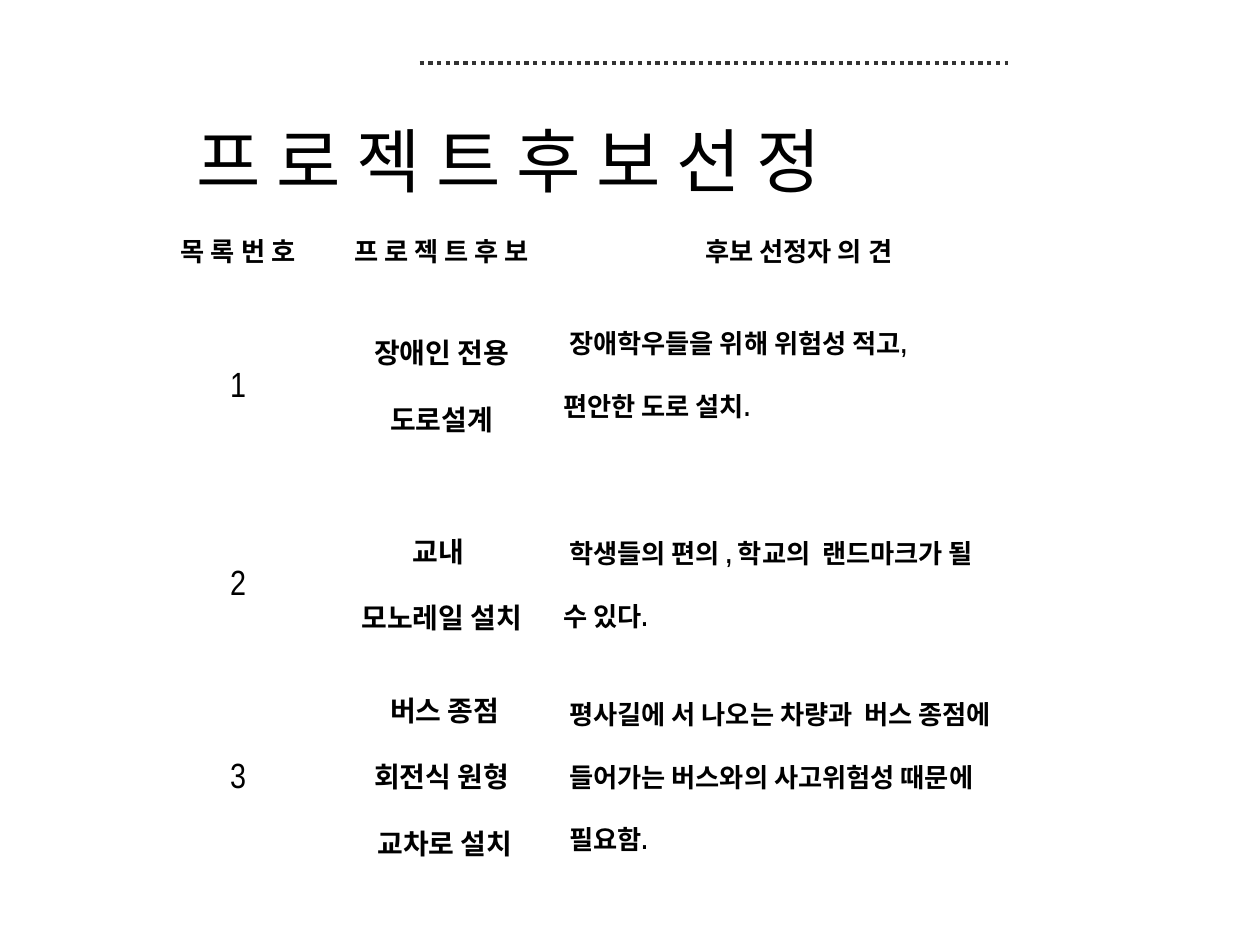
from dataclasses import dataclass

import pptx
import pptx.dml.color
import pptx.enum.dml
import pptx.enum.shapes
import pptx.enum.text
import pptx.oxml
import pptx.oxml.ns
import pptx.util

Inches = pptx.util.Inches
Pt = pptx.util.Pt
ALIGN = pptx.enum.text.PP_ALIGN
MIDDLE = pptx.enum.text.MSO_ANCHOR.MIDDLE

COLORS = {"text": "000000", "rule": "333333", "background": "FFFFFF"}
KOREAN_FONT = "Noto Sans CJK KR"
TABLE_FONT = "Arial Narrow"
COLUMN_WIDTHS = (1.5, 1.73, 3.94)
ROW_HEIGHTS = (0.38, 1.8, 1.35, 1.7)
HEADERS = ("목 록 번 호", "프 로 젝 트 후 보", "후보 선정자 의 견")


@dataclass
class Candidate:
    number: str
    project: tuple[str, ...]
    opinion: tuple[str, ...]
    opinion_align: ALIGN = ALIGN.JUSTIFY
    opinion_bottom: float = 0.05


CANDIDATES = (
    Candidate("1", ("장애인 전용", "도로설계"),
              (" 장애학우들을 위해 위험성 적고,", "편안한 도로 설치."),
              ALIGN.LEFT, 0.23),
    Candidate("2", ("교내 ", "모노레일 설치"),
              (" 학생들의 편의 , 학교의  랜드마크가 될 ", "수 있다.")),
    Candidate("3", (" 버스 종점", "회전식 원형", " 교차로 설치"),
              (" 평사길에 서 나오는 차량과  버스 종점에",
               " 들어가는 버스와의 사고위험성 때문에", " 필요함.")),
)


def color(name: str) -> pptx.dml.color.RGBColor:
    return pptx.dml.color.RGBColor.from_string(COLORS[name])


def write_line(paragraph, text: str, align, **font_format) -> None:
    """Write one line in black, with the Korean font for Korean letters."""
    paragraph.alignment = align
    run = paragraph.add_run()
    run.text = text
    for attribute, value in font_format.items():
        setattr(run.font, attribute, value)
    run.font.color.rgb = color("text")
    properties = run._r.get_or_add_rPr()
    east_asian = pptx.oxml.parse_xml(
        f'<a:ea {pptx.oxml.ns.nsdecls("a")} typeface="{KOREAN_FONT}"/>')
    properties.find(pptx.oxml.ns.qn("a:latin")).addnext(east_asian)


def clear_borders(cell) -> None:
    properties = cell._tc.get_or_add_tcPr()
    for position, side in enumerate(("lnL", "lnR", "lnT", "lnB")):
        properties.insert(position, pptx.oxml.parse_xml(
            f'<a:{side} {pptx.oxml.ns.nsdecls("a")} w="0"><a:noFill/></a:{side}>'))


def fill_cell(cell, lines: tuple[str, ...], size: int, align=ALIGN.CENTER,
              bold: bool = True, bottom: float = 0.05) -> None:
    cell.fill.background()
    clear_borders(cell)
    cell.vertical_anchor = MIDDLE
    cell.margin_bottom = Inches(bottom)
    for index, text in enumerate(lines):
        frame = cell.text_frame
        paragraph = frame.add_paragraph() if index else frame.paragraphs[0]
        if len(lines) > 1:
            paragraph.line_spacing = Pt(size * 1.2)
        if index:
            paragraph.space_before = Pt(size * 1.18)
        write_line(paragraph, text, align, name=TABLE_FONT, size=Pt(size), bold=bold)


def add_title(slide) -> None:
    title = slide.shapes.title
    placement = {"left": 1.46, "top": 0.91, "width": 6.54, "height": 0.71}
    for attribute, value in placement.items():
        setattr(title, attribute, Inches(value))
    title.text_frame.vertical_anchor = MIDDLE
    write_line(title.text_frame.paragraphs[0], "프 로 젝 트 후 보 선 정",
               ALIGN.LEFT, name=KOREAN_FONT, size=Pt(40))


def add_dotted_rule(slide) -> None:
    rule = slide.shapes.add_connector(
        pptx.enum.shapes.MSO_CONNECTOR.STRAIGHT,
        Inches(3.33), Inches(0.5), Inches(8), Inches(0.5))
    rule.line.color.rgb = color("rule")
    rule.line.width = Pt(2.5)
    rule.line.dash_style = pptx.enum.dml.MSO_LINE.ROUND_DOT
    rule._element.spPr.append(pptx.oxml.parse_xml(
        f'<a:effectLst {pptx.oxml.ns.nsdecls("a")}/>'))


def add_candidate_table(slide) -> None:
    table = slide.shapes.add_table(
        len(ROW_HEIGHTS), len(COLUMN_WIDTHS), Inches(1.14), Inches(1.78),
        Inches(sum(COLUMN_WIDTHS)), Inches(sum(ROW_HEIGHTS))).table
    table.first_row = table.horz_banding = False
    for column, width in zip(table.columns, COLUMN_WIDTHS):
        column.width = Inches(width)
    for row, height in zip(table.rows, ROW_HEIGHTS):
        row.height = Inches(height)

    for column, header in enumerate(HEADERS):
        fill_cell(table.cell(0, column), (header,), 15)
    for row, candidate in enumerate(CANDIDATES, start=1):
        fill_cell(table.cell(row, 0), (candidate.number,), 20, bold=False)
        fill_cell(table.cell(row, 1), candidate.project, 16)
        fill_cell(table.cell(row, 2), candidate.opinion, 15,
                  candidate.opinion_align, bottom=candidate.opinion_bottom)


def main() -> None:
    presentation = pptx.Presentation()
    presentation.slide_width = Inches(10)
    presentation.slide_height = Inches(7.5)
    slide = presentation.slides.add_slide(presentation.slide_layouts[5])
    slide.background.fill.solid()
    slide.background.fill.fore_color.rgb = color("background")

    add_title(slide)
    add_dotted_rule(slide)
    add_candidate_table(slide)
    presentation.save("out.pptx")


if __name__ == "__main__":
    main()
